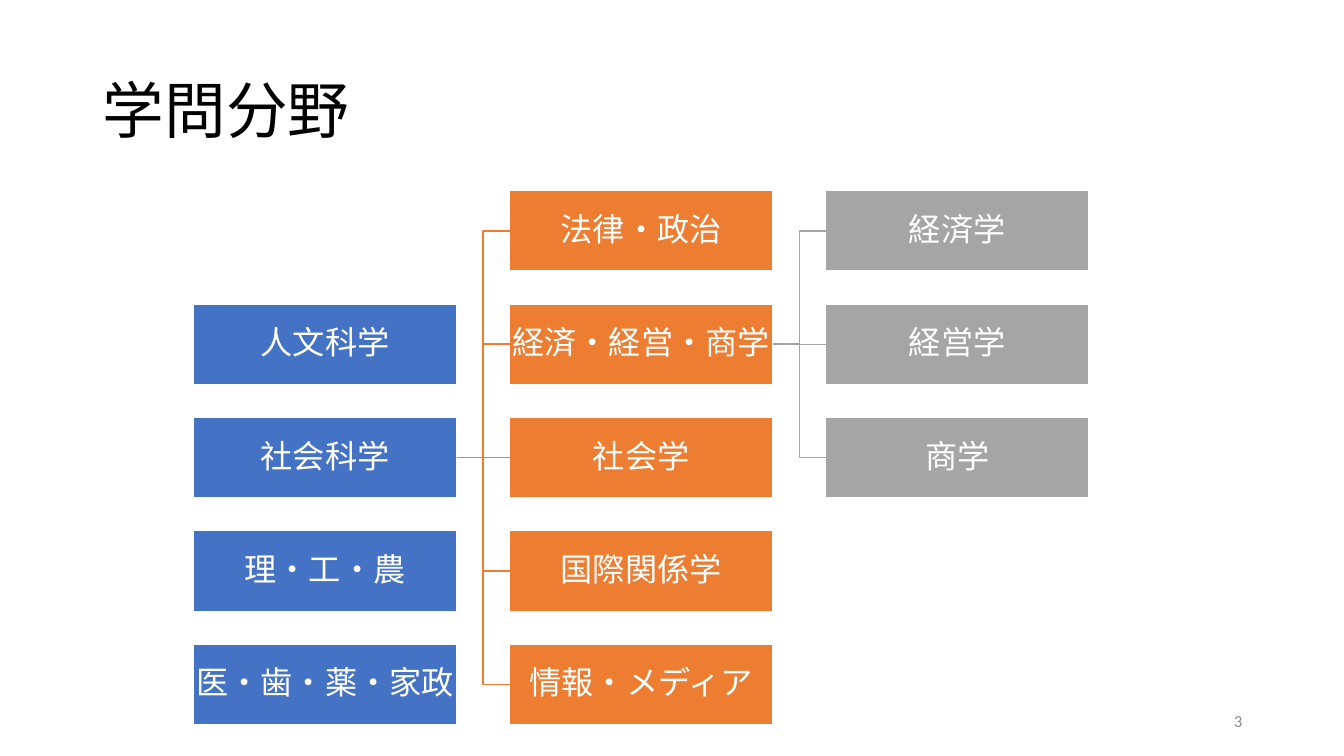
from pptx import Presentation
from pptx.dml.color import RGBColor
from pptx.enum.shapes import MSO_CONNECTOR, MSO_SHAPE
from pptx.enum.text import MSO_ANCHOR, PP_ALIGN
from pptx.oxml.ns import qn
from pptx.util import Inches, Pt
from lxml.etree import SubElement

BLUE, ORANGE, GRAY, WHITE = "4472C4", "ED7D31", "A5A5A5", "FFFFFF"
LEFT, TOP = 1.92, 1.89
COL_STEP, ROW_STEP = 3.135, 1.125
BOX_W, BOX_H = 2.61, 0.8
RIGHT_SIDE, LEFT_SIDE = 3, 1

# Each column: colour, first row, fields
COLUMNS = [
    (BLUE, 1, ["人文科学", "社会科学", "理・工・農", "医・歯・薬・家政"]),
    (ORANGE, 0, ["法律・政治", "経済・経営・商学", "社会学", "国際関係学", "情報・メディア"]),
    (GRAY, 0, ["経済学", "経営学", "商学"]),
]
PARENTS = ["社会科学", "経済・経営・商学"]


def rgb(value):
    return RGBColor.from_string(value)


def write(shape, text, size, color, align, spacing=None, after=None):
    tf = shape.text_frame
    tf.word_wrap = True
    tf.vertical_anchor = MSO_ANCHOR.MIDDLE
    p = tf.paragraphs[0]
    formats = {"alignment": align, "line_spacing": spacing, "space_after": after}
    for name, value in formats.items():
        setattr(p, name, value)
    r = p.add_run()
    r.text = text
    for name, value in {"name": "Calibri", "size": Pt(size)}.items():
        setattr(r.font, name, value)
    r.font.color.rgb = rgb(color)


def place(shape, left, top, width, height):
    box = {"left": left, "top": top, "width": width, "height": height}
    for name, value in box.items():
        setattr(shape, name, Inches(value))


def add_box(s, text, color, col, row):
    sp = s.shapes.add_shape(
        MSO_SHAPE.RECTANGLE,
        Inches(LEFT + col * COL_STEP), Inches(TOP + row * ROW_STEP),
        Inches(BOX_W), Inches(BOX_H))
    sp.shadow.inherit = False
    sp.fill.solid()
    sp.fill.fore_color.rgb = rgb(color)
    sp.line.color.rgb = rgb(WHITE)
    sp.line.width = Pt(1)
    for side in ("left", "top", "right", "bottom"):
        setattr(sp.text_frame, f"margin_{side}", Inches(0.02))
    write(sp, text, 23, WHITE, PP_ALIGN.CENTER, 0.9, Pt(8))
    return sp


def add_branch(s, parent, child, color):
    same_row = parent.top == child.top
    kind = MSO_CONNECTOR.STRAIGHT if same_row else MSO_CONNECTOR.ELBOW
    line = s.shapes.add_connector(kind, 0, 0, 0, 0)
    line.begin_connect(parent, RIGHT_SIDE)
    line.end_connect(child, LEFT_SIDE)
    line.line.color.rgb = rgb(color)
    line.line.width = Pt(1)
    SubElement(line._element.spPr, qn("a:effectLst"))


def main():
    prs = Presentation()
    prs.slide_width, prs.slide_height = Inches(13.33), Inches(7.5)
    s = prs.slides.add_slide(prs.slide_layouts[5])

    # Title
    place(s.shapes.title, 0.92, 0.4, 11.5, 1.45)
    write(s.shapes.title, "学問分野", 44, "000000", PP_ALIGN.LEFT, 0.9)

    # Boxes, column by column
    columns = []
    for col, (color, first_row, fields) in enumerate(COLUMNS):
        columns.append({text: add_box(s, text, color, col, row)
                        for row, text in enumerate(fields, first_row)})

    # Branches from each parent to the whole next column
    for col, parent in enumerate(PARENTS):
        for child in columns[col + 1].values():
            add_branch(s, columns[col][parent], child, COLUMNS[col + 1][0])

    # Slide number
    number = s.shapes.add_textbox(Inches(9.42), Inches(6.95), Inches(3), Inches(0.4))
    write(number, "3", 12, "8C8C8C", PP_ALIGN.RIGHT)

    prs.save("out.pptx")


if __name__ == "__main__":
    main()
